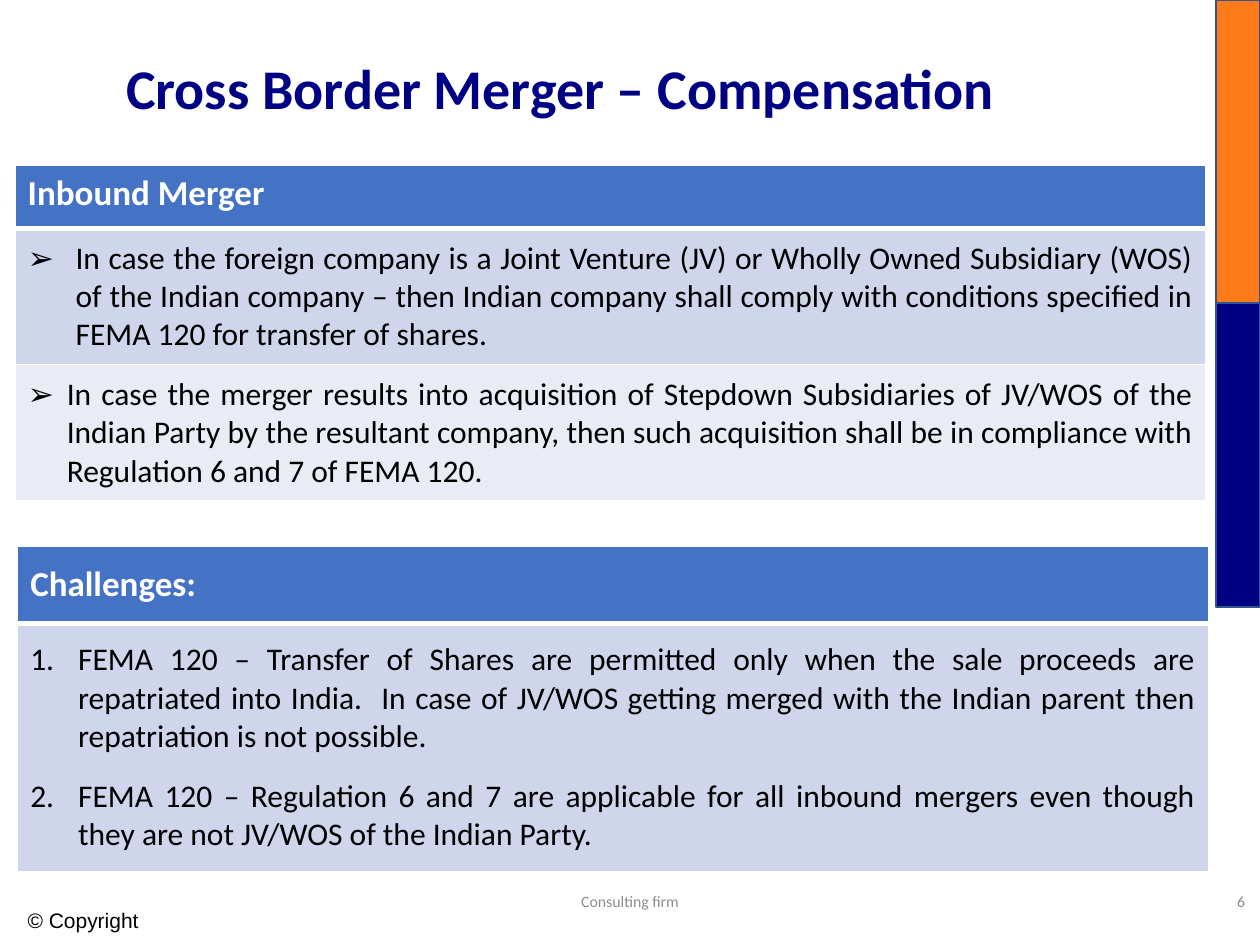
from dataclasses import dataclass

from lxml import etree
from pptx import Presentation
from pptx.dml.color import RGBColor
from pptx.enum.shapes import MSO_SHAPE
from pptx.enum.text import MSO_ANCHOR, MSO_AUTO_SIZE, PP_ALIGN
from pptx.oxml.ns import qn
from pptx.util import Inches, Pt

RECT = MSO_SHAPE.RECTANGLE
TOP, MID = MSO_ANCHOR.TOP, MSO_ANCHOR.MIDDLE
LEFT, MIDDLE, RIGHT = PP_ALIGN.LEFT, PP_ALIGN.CENTER, PP_ALIGN.RIGHT
JUST = PP_ALIGN.JUSTIFY
NO_FIT = MSO_AUTO_SIZE.NONE
WIDE, HIGH = Inches(10), Inches(7.5)


@dataclass(frozen=True)
class Theme:
    """Hold the colours, fonts and type sizes of the slide."""
    navy: str = "000085"
    orange: str = "FF7B19"
    edge: str = "325491"
    head: str = "4472C4"
    bands: tuple = ("CFD5EA", "E9EBF5")
    white: str = "FFFFFF"
    black: str = "000000"
    grey: str = "8C8C8C"
    font: str = "Calibri"
    plain: str = "Arial"
    title: int = 32
    label: int = 20
    body: int = 18
    note: int = 12
    small: int = 9


THEME = Theme()


def color(code):
    """Turn a hex code into a colour."""
    return RGBColor.from_string(code)


def share(x, y, w, h):
    """Turn shares of the slide's size into a box."""
    return [round(v * full) for v, full in zip((x, y, w, h), (WIDE, HIGH) * 2)]


def write(frame, text, size=THEME.body, tint=THEME.black, font=THEME.font,
          bold=False, align=LEFT, more=False, bullet=None, hang=0.38,
          gap=0, lines=None):
    """Write one paragraph into a frame and format it."""
    para = frame.add_paragraph() if more else frame.paragraphs[0]
    para.alignment = align
    if lines:
        para.line_spacing = lines
    if gap:
        para.space_after = Pt(gap)
        if more:
            para.space_before = Pt(gap)
    if bullet:
        mark(para, bullet, hang)
    run = para.add_run()
    run.text = text
    face = run.font
    face.name, face.size, face.bold = font, Pt(size), bold
    face.color.rgb = color(tint)


def mark(para, bullet, hang):
    """Give a paragraph a hanging number or bullet sign."""
    props = para._p.get_or_add_pPr()
    props.set("marL", str(Inches(hang)))
    props.set("indent", str(-Inches(hang)))
    if bullet == "1.":
        etree.SubElement(props, qn("a:buFont"), typeface="+mj-lt")
        etree.SubElement(props, qn("a:buAutoNum"), type="arabicPeriod")
    else:
        etree.SubElement(props, qn("a:buFont"), typeface=THEME.plain)
        etree.SubElement(props, qn("a:buChar"), char=bullet)


def label(slide, box, text, **style):
    """Add a line of free text."""
    frame = slide.shapes.add_textbox(*box).text_frame
    frame.word_wrap = True
    frame.vertical_anchor = MID
    write(frame, text, **style)


def band(slide, box, tint):
    """Add a block to the side stripe."""
    shape = slide.shapes.add_shape(RECT, *box)
    shape.shadow.inherit = False
    shape.fill.solid()
    shape.fill.fore_color.rgb = color(tint)
    shape.line.color.rgb = color(THEME.edge)
    shape.line.width = Pt(1)


def paint(cell, tint, base=1):
    """Fill a cell and rule its borders in white."""
    props = cell._tc.get_or_add_tcPr()
    for side, width in zip("LRTB", (1, 1, 1, base)):
        line = etree.SubElement(props, qn(f"a:ln{side}"), w=str(Pt(width)))
        fill = etree.SubElement(line, qn("a:solidFill"))
        etree.SubElement(fill, qn("a:srgbClr"), val=THEME.white)
    cell.fill.solid()
    cell.fill.fore_color.rgb = color(tint)


def panel(slide, left, top, rows, head, items, anchor=MID):
    """Add a table with a head row and one row per list of points."""
    box = share(left, top, 0.945, sum(rows))
    table = slide.shapes.add_table(len(rows), 1, *box).table
    for row, tall in zip(table.rows, rows):
        row.height = round(tall * HIGH)
    first = table.cell(0, 0)
    paint(first, THEME.head, base=3)
    first.vertical_anchor = anchor
    write(first.text_frame, head, size=THEME.label, tint=THEME.white,
          bold=True, gap=6)
    for i, points in enumerate(items):
        cell = table.cell(i + 1, 0)
        paint(cell, THEME.bands[i % 2])
        cell.vertical_anchor = MID
        for j, (text, style) in enumerate(points):
            write(cell.text_frame, text, align=JUST, more=j > 0, **style)


def heading(slide, text):
    """Place and format the title."""
    title = slide.shapes.title
    title.left, title.top, title.width, title.height = share(
        0.09, 0, 0.875, 0.193)
    frame = title.text_frame
    frame.auto_size = NO_FIT
    frame.vertical_anchor = MID
    write(frame, text, size=THEME.title, tint=THEME.navy, bold=True, lines=0.9)


def main():
    """Build the slide and save it."""
    deck = Presentation()
    deck.slide_width, deck.slide_height = WIDE, HIGH
    slide = deck.slides.add_slide(deck.slide_layouts[5])
    for i, tint in enumerate((THEME.orange, THEME.navy)):
        band(slide, share(0.965, i * 0.321, 0.035, 0.321), tint)
    heading(slide, "Cross Border Merger – Compensation")

    arrow = {"bullet": "➢"}
    panel(slide, 0.012, 0.175, (0.067, 0.144, 0.144), "Inbound Merger", [
        [("In case the foreign company is a Joint Venture (JV) or Wholly "
          "Owned Subsidiary (WOS) of the Indian company – then Indian company "
          "shall comply with conditions specified in FEMA 120 for transfer "
          "of shares.", arrow)],
        [("In case the merger results into acquisition of Stepdown "
          "Subsidiaries of JV/WOS of the Indian Party by the resultant "
          "company, then such acquisition shall be in compliance with "
          "Regulation 6 and 7 of FEMA 120.", {**arrow, "hang": 0.31})],
    ], anchor=TOP)

    count = {"bullet": "1.", "gap": 6}
    panel(slide, 0.014, 0.578, (0.082, 0.262), "Challenges:", [[
        ("FEMA 120 – Transfer of Shares are permitted only when the sale "
         "proceeds are repatriated into India.  In case of JV/WOS getting "
         "merged with the Indian parent then repatriation is not possible.",
         count),
        ("FEMA 120 – Regulation 6 and 7 are applicable for all inbound "
         "mergers even though they are not JV/WOS of the Indian Party.",
         count),
    ]])

    faint = {"size": THEME.small, "tint": THEME.grey}
    label(slide, share(0.331, 0.927, 0.338, 0.053), "Consulting firm",
          align=MIDDLE, **faint)
    label(slide, share(0.773, 0.927, 0.225, 0.053), "6", align=RIGHT, **faint)
    label(slide, share(0.012, 0.947, 0.165, 0.053), "© Copyright",
          size=THEME.note, font=THEME.plain)
    deck.save("out.pptx")


if __name__ == "__main__":
    main()
